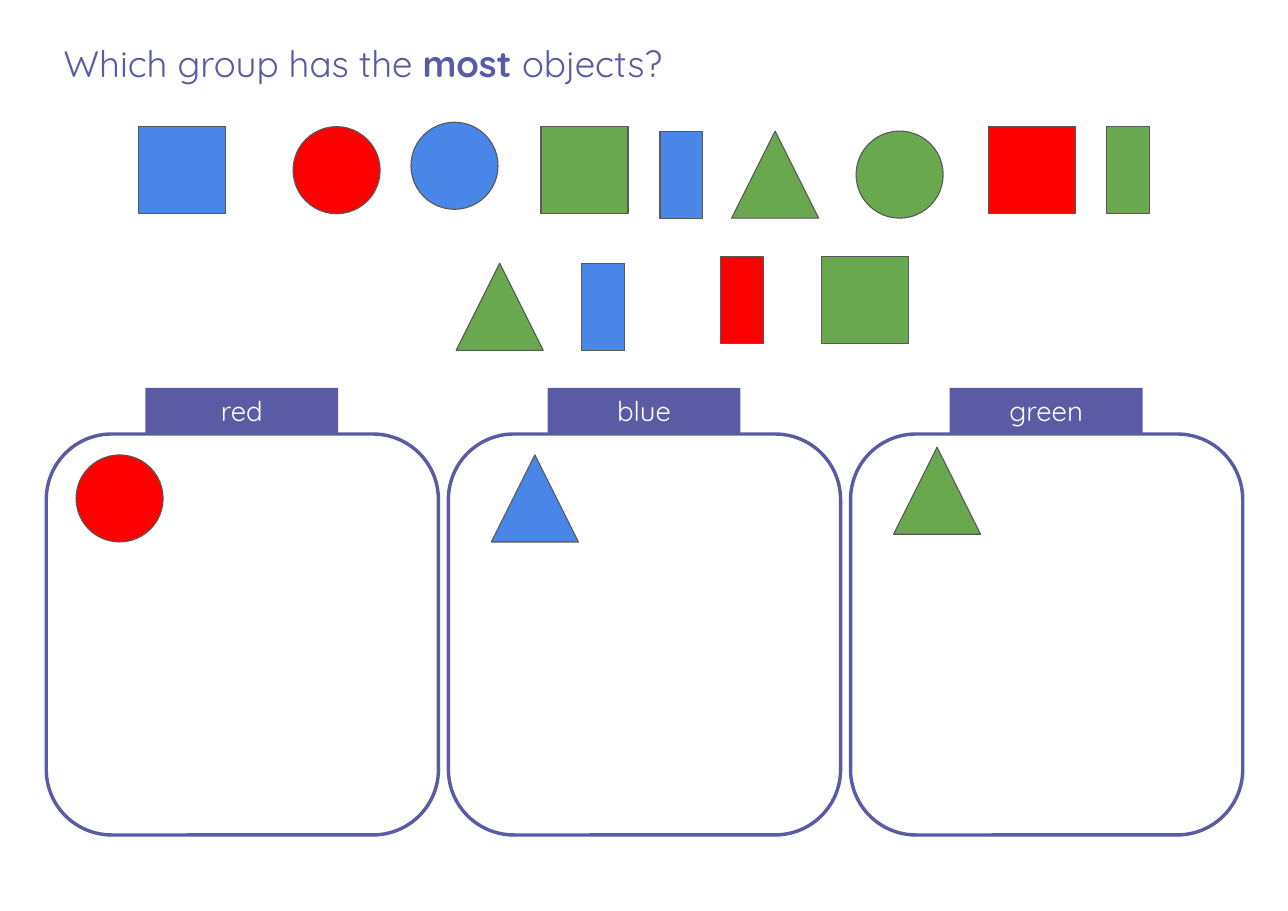
from dataclasses import dataclass

import pptx
import pptx.dml.color
import pptx.enum.shapes
import pptx.enum.text
import pptx.util

SCALE = 9144
FONT = "Quicksand"
MARGIN = 10
SIDE = 79
GROUP_LEFT, GROUP_PITCH = 42, 365
COLORS = {
    "purple": "5B5BA5",
    "white": "FFFFFF",
    "red": "FF0000",
    "blue": "4A86E8",
    "green": "6AA84F",
    "outline": "595959",
}
MSO = pptx.enum.shapes.MSO_SHAPE
ALIGN = pptx.enum.text.PP_ALIGN
ANCHOR = pptx.enum.text.MSO_ANCHOR
KINDS = {
    "square": (MSO.RECTANGLE, SIDE),
    "bar": (MSO.RECTANGLE, SIDE // 2),
    "circle": (MSO.OVAL, SIDE),
    "triangle": (MSO.ISOSCELES_TRIANGLE, SIDE),
}


@dataclass(frozen=True)
class Item:
    kind: str
    color: str
    x: int
    y: int


@dataclass(frozen=True)
class Group:
    name: str
    example: Item


GROUPS = [
    Group("red", Item("circle", "red", 69, 413)),
    Group("blue", Item("triangle", "blue", 446, 413)),
    Group("green", Item("triangle", "green", 811, 406)),
]
ITEMS = [
    Item("square", "blue", 126, 115),
    Item("circle", "red", 266, 115),
    Item("circle", "blue", 373, 111),
    Item("square", "green", 491, 115),
    Item("bar", "blue", 599, 119),
    Item("triangle", "green", 664, 119),
    Item("circle", "green", 777, 119),
    Item("square", "red", 897, 115),
    Item("bar", "green", 1004, 115),
    Item("triangle", "green", 414, 239),
    Item("bar", "blue", 528, 239),
    Item("bar", "red", 654, 233),
    Item("square", "green", 746, 233),
]


def px(n: int) -> pptx.util.Emu:
    return pptx.util.Emu(n * SCALE)


def rgb(name: str) -> pptx.dml.color.RGBColor:
    return pptx.dml.color.RGBColor.from_string(COLORS[name])


def set_frame(tf, **formats) -> None:
    margins = {f"margin_{side}": px(MARGIN) for side in ("left", "top", "right", "bottom")}
    for name, value in {"word_wrap": True, **margins, **formats}.items():
        setattr(tf, name, value)


def add_run(p, text: str, size: int, color: str, bold: bool = False) -> None:
    r = p.add_run()
    r.text = text
    for name, value in {"name": FONT, "size": pptx.util.Pt(size), "bold": bold}.items():
        setattr(r.font, name, value)
    r.font.color.rgb = rgb(color)


def add_shape(s, kind, box: tuple[int, int, int, int], fill: str = "", line: str = "", width: float = 0.75):
    sp = s.shapes.add_shape(kind, *map(px, box))
    sp.shadow.inherit = False
    if fill:
        sp.fill.solid()
        sp.fill.fore_color.rgb = rgb(fill)
    else:
        sp.fill.background()
    if line:
        sp.line.color.rgb = rgb(line)
        sp.line.width = pptx.util.Pt(width)
    else:
        sp.line.fill.background()
    return sp


def add_item(s, item: Item) -> None:
    kind, width = KINDS[item.kind]
    add_shape(s, kind, (item.x, item.y, width, SIDE), item.color, "outline")


def add_group(s, group: Group, left: int) -> None:
    sp = add_shape(s, MSO.ROUNDED_RECTANGLE, (left, 394, 356, 364), line="purple", width=2.25)
    sp.adjustments[0] = 0.167
    tab = add_shape(s, MSO.RECTANGLE, (left + 90, 352, 175, 42), "purple")
    tf = tab.text_frame
    set_frame(tf, vertical_anchor=ANCHOR.MIDDLE)
    p = tf.paragraphs[0]
    p.alignment = ALIGN.CENTER
    add_run(p, group.name, 18, "white")
    add_item(s, group.example)


def add_title(s) -> None:
    tf = s.shapes.add_textbox(*map(px, (48, 27, 1074, 74))).text_frame
    set_frame(tf, vertical_anchor=ANCHOR.TOP)
    p = tf.paragraphs[0]
    for text, bold in (("Which group has the ", False), ("most ", True), ("objects?", False)):
        add_run(p, text, 24, "purple", bold)


def main() -> None:
    prs = pptx.Presentation()
    prs.slide_width, prs.slide_height = px(1169), px(827)
    s = prs.slides.add_slide(prs.slide_layouts[6])
    add_title(s)
    for i, group in enumerate(GROUPS):
        add_group(s, group, GROUP_LEFT + i * GROUP_PITCH)
    for item in ITEMS:
        add_item(s, item)
    prs.save("out.pptx")


if __name__ == "__main__":
    main()
